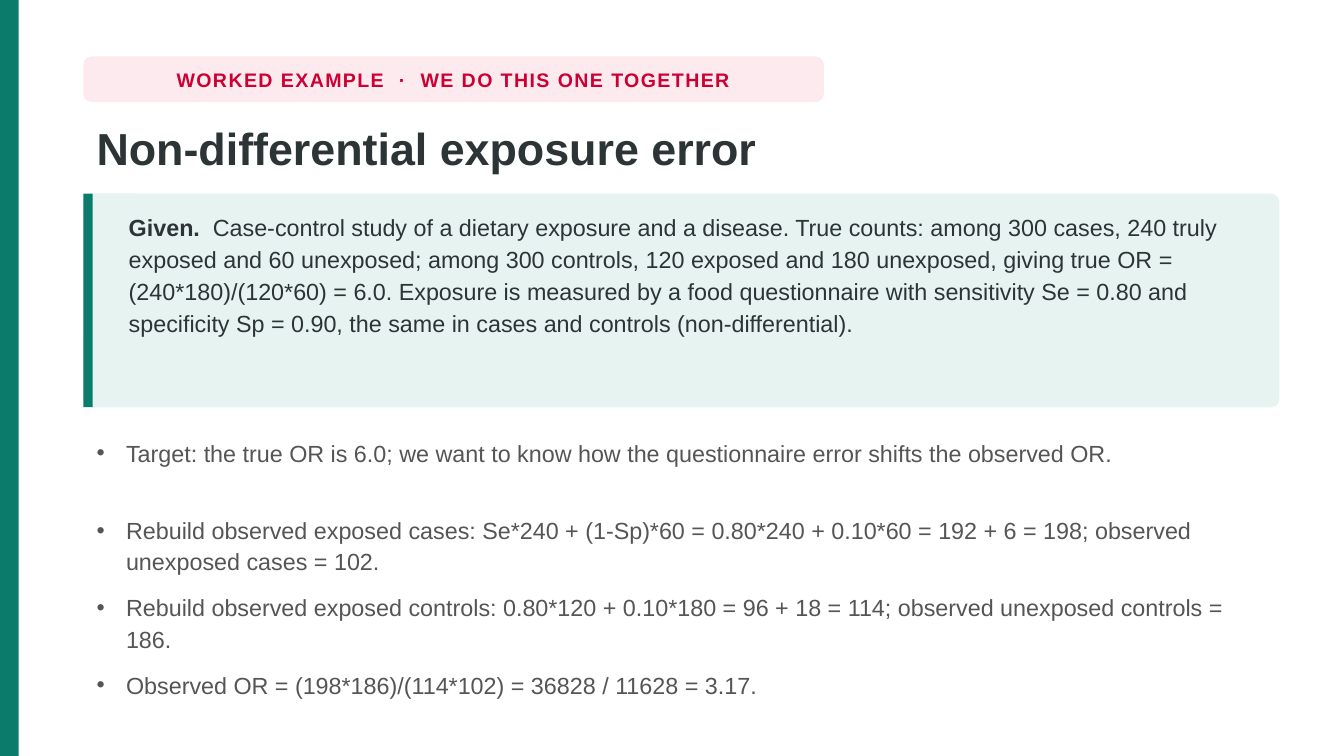
from dataclasses import dataclass
from typing import Optional

from lxml.etree import SubElement
from pptx import Presentation
from pptx.dml.color import RGBColor
from pptx.enum.shapes import MSO_SHAPE as Kind
from pptx.enum.text import MSO_ANCHOR as Anchor, PP_ALIGN as Align
from pptx.oxml.ns import qn
from pptx.util import Pt

GREEN = RGBColor(0x0B, 0x7B, 0x6B)
MINT = RGBColor(0xE6, 0xF3, 0xF0)
PINK = RGBColor(0xFD, 0xEA, 0xEF)
RED = RGBColor(0xCC, 0x00, 0x33)
DARK = RGBColor(0x2D, 0x34, 0x36)
GRAY = RGBColor(0x55, 0x55, 0x55)

WIDTH, HEIGHT = 720, 405
LEFT, SPAN = 44.64, 640.8
HANG = 15.84
FIRST, STEP = 229.75, 41.45


@dataclass
class Box:
    x: float
    y: float
    w: float
    h: float


@dataclass
class Panel:
    box: Box
    fill: RGBColor
    round: Optional[float] = None


@dataclass
class Run:
    text: str
    bold: bool = False


@dataclass
class Note:
    box: Box
    runs: list[Run]
    size: float
    color: RGBColor
    line: float = 1
    align: Align = Align.LEFT
    anchor: Anchor = Anchor.TOP
    track: float = 0
    bullet: bool = False


def draw_panel(slide, panel: Panel) -> None:
    box = panel.box
    kind = Kind.RECTANGLE if panel.round is None else Kind.ROUNDED_RECTANGLE
    shape = slide.shapes.add_shape(kind, Pt(box.x), Pt(box.y), Pt(box.w), Pt(box.h))
    if panel.round is not None:
        shape.adjustments[0] = panel.round
    shape.shadow.inherit = False
    shape.fill.solid()
    shape.fill.fore_color.rgb = panel.fill
    shape.line.fill.background()


def add_bullet(para) -> None:
    props = para._p.get_or_add_pPr()
    props.set("marL", str(Pt(HANG)))
    props.set("indent", str(-Pt(HANG)))
    SubElement(props, qn("a:buFont")).set("typeface", "Arial")
    SubElement(props, qn("a:buChar")).set("char", "•")


def draw_note(slide, note: Note) -> None:
    box = note.box
    shape = slide.shapes.add_textbox(Pt(box.x), Pt(box.y), Pt(box.w), Pt(box.h))
    frame = shape.text_frame
    frame.word_wrap = True
    frame.vertical_anchor = note.anchor
    para = frame.paragraphs[0]
    if note.bullet:
        add_bullet(para)
    para.alignment = note.align
    para.line_spacing = note.line
    for part in note.runs:
        run = para.add_run()
        run.text = part.text
        font = run.font
        font.name = "Arial"
        font.size = Pt(note.size)
        font.bold = part.bold
        font.color.rgb = note.color
        if note.track:
            run._r.get_or_add_rPr().set("spc", str(round(note.track * 100)))


TAG = Box(LEFT, 30.24, 396.72, 24.48)
CARD = Box(LEFT, 103.68, SPAN, 114.48)

PANELS = [
    Panel(Box(0, 0, 10, HEIGHT), GREEN),
    Panel(TAG, PINK, 0.18),
    Panel(CARD, MINT, 0.04),
    Panel(Box(LEFT, CARD.y, 5, CARD.h), GREEN),
]

GIVEN = (
    "Case-control study of a dietary exposure and a disease. True counts: "
    "among 300 cases, 240 truly exposed and 60 unexposed; among 300 controls, "
    "120 exposed and 180 unexposed, giving true OR = (240*180)/(120*60) = 6.0. "
    "Exposure is measured by a food questionnaire with sensitivity Se = 0.80 "
    "and specificity Sp = 0.90, the same in cases and controls (non-differential)."
)

STEPS = [
    "Target: the true OR is 6.0; we want to know how the questionnaire error "
    "shifts the observed OR.",
    "Rebuild observed exposed cases: Se*240 + (1-Sp)*60 = 0.80*240 + 0.10*60 "
    "= 192 + 6 = 198; observed unexposed cases = 102.",
    "Rebuild observed exposed controls: 0.80*120 + 0.10*180 = 96 + 18 = 114; "
    "observed unexposed controls = 186.",
    "Observed OR = (198*186)/(114*102) = 36828 / 11628 = 3.17.",
]

NOTES = [
    Note(TAG, [Run("WORKED EXAMPLE  ·  WE DO THIS ONE TOGETHER", True)], 10.5, RED,
         align=Align.CENTER, anchor=Anchor.MIDDLE, track=0.8),
    Note(Box(LEFT, 60.48, SPAN, 40.32), [Run("Non-differential exposure error", True)],
         24, DARK, line=1.02),
    Note(Box(61.92, 108.72, 604.8, 104.4), [Run("Given.  ", True), Run(GIVEN)],
         12.5, DARK, line=1.14),
]
NOTES += [
    Note(Box(LEFT, FIRST + i * STEP, SPAN, 35.28 if i < len(STEPS) - 1 else 19.44),
         [Run(text)], 12.5, GRAY, line=1.12, bullet=True)
    for i, text in enumerate(STEPS)
]


def main() -> None:
    deck = Presentation()
    deck.slide_width, deck.slide_height = Pt(WIDTH), Pt(HEIGHT)
    slide = deck.slides.add_slide(deck.slide_layouts[6])
    for panel in PANELS:
        draw_panel(slide, panel)
    for note in NOTES:
        draw_note(slide, note)
    deck.save("out.pptx")


if __name__ == "__main__":
    main()
